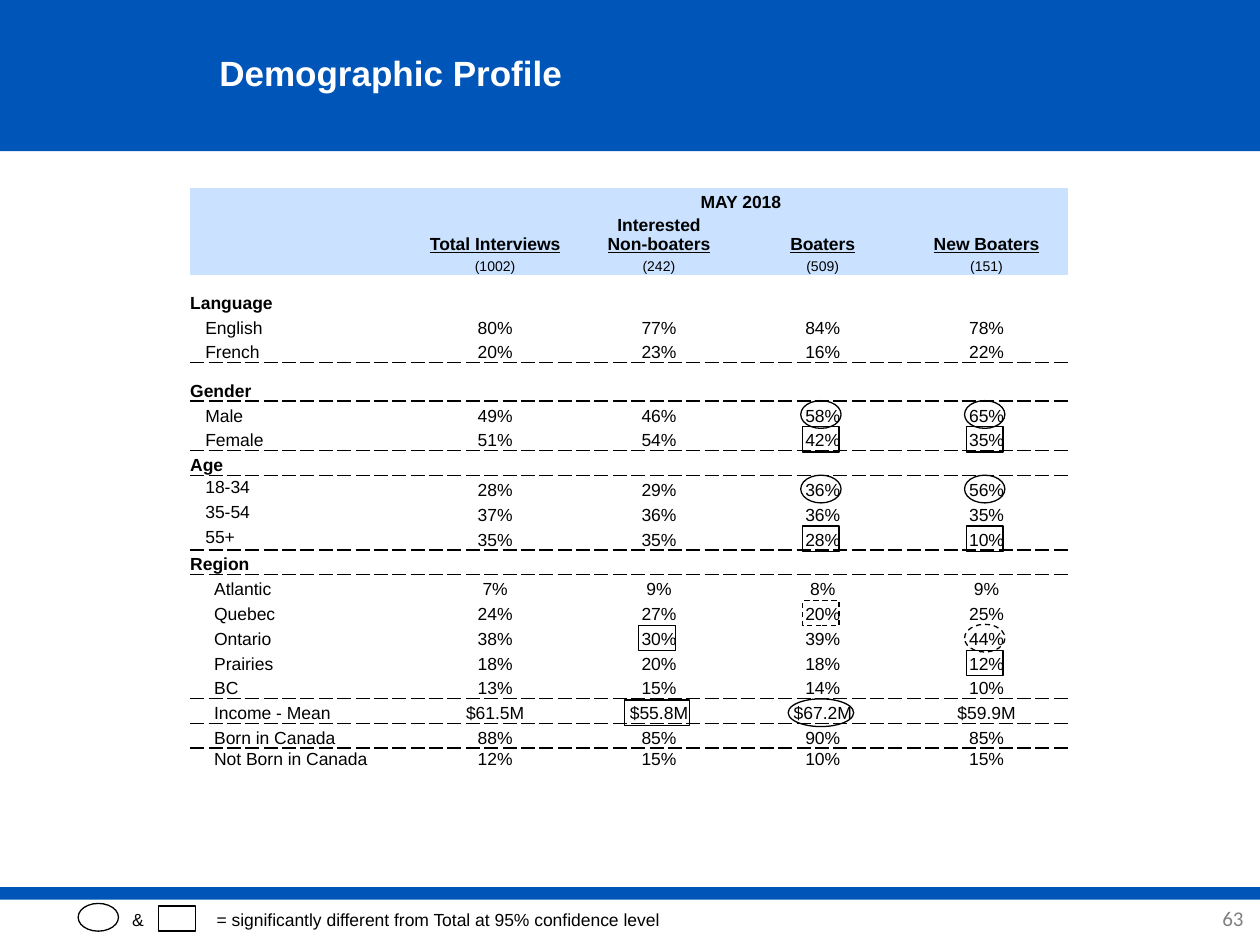
from lxml import etree
from pptx import Presentation
from pptx import util as u
from pptx.dml.color import RGBColor
from pptx.enum import dml, shapes, text
from pptx.oxml import ns

BLUE = RGBColor(0x00, 0x55, 0xB9)
PALE = RGBColor(0xCA, 0xE2, 0xFF)
WHITE = RGBColor(0xFF, 0xFF, 0xFF)
BLACK = RGBColor(0, 0, 0)
GREY = RGBColor(0x80, 0x80, 0x80)
RECT = shapes.MSO_SHAPE.RECTANGLE
OVAL = shapes.MSO_SHAPE.OVAL
LEFT, MID, RIGHT = text.PP_ALIGN.LEFT, text.PP_ALIGN.CENTER, text.PP_ALIGN.RIGHT
BASE, HALF = text.MSO_ANCHOR.BOTTOM, text.MSO_ANCHOR.MIDDLE
PLAIN = "{2D5ABB26-0587-4C30-8999-92F81FD0307C}"

ROWS = [
    ("", "MAY 2018", "", "", ""),
    ("", "Total Interviews", "Interested\nNon-boaters", "Boaters", "New Boaters"),
    ("", "(1002)", "(242)", "(509)", "(151)"),
    ("Language",),
    ("English", "80%", "77%", "84%", "78%"),
    ("French", "20%", "23%", "16%", "22%"),
    ("Gender",),
    ("Male", "49%", "46%", "58%", "65%"),
    ("Female", "51%", "54%", "42%", "35%"),
    ("Age",),
    ("18-34", "28%", "29%", "36%", "56%"),
    ("35-54", "37%", "36%", "36%", "35%"),
    ("55+", "35%", "35%", "28%", "10%"),
    ("Region",),
    ("Atlantic", "7%", "9%", "8%", "9%"),
    ("Quebec", "24%", "27%", "20%", "25%"),
    ("Ontario", "38%", "30%", "39%", "44%"),
    ("Prairies", "18%", "20%", "18%", "12%"),
    ("BC", "13%", "15%", "14%", "10%"),
    ("Income - Mean", "$61.5M", "$55.8M", "$67.2M", "$59.9M"),
    ("Born in Canada", "88%", "85%", "90%", "85%"),
    ("Not Born in Canada", "12%", "15%", "10%", "15%"),
]
HEAD = 3
TALL = {1: 23.5, 2: 11.5, 3: 21.9, 6: 21.9, 21: 11.7}
HIGH = [TALL.get(i, 14.2) / 7.2 for i in range(len(ROWS))]
WIDE = [17.7] + [13] * 4
RULED = {5, 8, 12, 18, 19}
AGES = range(10, 13)
DEEP = 14
TABLE = (15.1, 14.9)
SIZES = {RECT: (2.9, 2), OVAL: (3.2, 2.2)}
MARKS = [
    (OVAL, 7, 3), (OVAL, 7, 4), (RECT, 8, 3), (RECT, 8, 4),
    (OVAL, 10, 3), (OVAL, 10, 4), (RECT, 12, 3), (RECT, 12, 4),
    (RECT, 15, 3, True), (RECT, 16, 2), (OVAL, 16, 4, True), (RECT, 17, 4),
    (RECT, 19, 2, False, 5.2), (OVAL, 19, 3, False, 5.2),
]


class Page:
    """Draws styled elements on a slide laid out as 100 columns by 75 rows."""

    def __init__(self, deck):
        self.unit = deck.slide_width / 100
        self.slide = deck.slides.add_slide(deck.slide_layouts[5])
        self.font = {"name": "Arial", "size": u.Pt(10), "bold": False, "underline": False}

    def span(self, *nums):
        return [round(n * self.unit) for n in nums]

    def say(self, para, words, color=BLACK, **style):
        run = para.add_run()
        run.text = words
        for key, val in {**self.font, **style}.items():
            setattr(run.font, key, val)
        run.font.color.rgb = color

    def frame(self, frame, pads, **style):
        sides = ("margin_left", "margin_top", "margin_right", "margin_bottom")
        for key, val in {**dict(zip(sides, self.span(*pads))), **style}.items():
            setattr(frame, key, val)

    def title(self, words, at):
        item = self.slide.shapes.title
        item.left, item.top, item.width, item.height = self.span(*at)
        self.frame(item.text_frame, (1, 0.5, 1, 0.5), vertical_anchor=HALF, word_wrap=True)
        para = item.text_frame.paragraphs[0]
        para.alignment = LEFT
        self.say(para, words, WHITE, size=u.Pt(20), bold=True)
        item._element.getparent().append(item._element)

    def label(self, words, at, pads, align=LEFT, tab=None, **style):
        box = self.slide.shapes.add_textbox(*self.span(*at))
        self.frame(box.text_frame, pads, vertical_anchor=HALF, word_wrap=True)
        para = box.text_frame.paragraphs[0]
        para.alignment = align
        if tab:
            tabs = etree.SubElement(para._p.get_or_add_pPr(), ns.qn("a:tabLst"))
            etree.SubElement(tabs, ns.qn("a:tab"), pos=str(self.span(tab)[0]), algn="l")
        self.say(para, words, **style)

    def band(self, at):
        item = self.slide.shapes.add_shape(RECT, *self.span(*at))
        item.shadow.inherit = False
        item.fill.solid()
        item.fill.fore_color.rgb = BLUE
        item.line.fill.background()

    def ring(self, kind, x, y, dash=False, wide=None):
        w, h = SIZES[kind]
        w = wide or w
        item = self.slide.shapes.add_shape(kind, *self.span(x - w / 2, y - h / 2, w, h))
        item.shadow.inherit = False
        item.fill.background()
        item.line.color.rgb = BLACK
        item.line.width = u.Pt(0.75)
        if dash:
            item.line.dash_style = dml.MSO_LINE.DASH

    def mark(self, kind, row, col, dash=False, wide=None):
        x = TABLE[0] + sum(WIDE[:col]) + WIDE[col] / 2 - 0.15
        y = TABLE[1] + sum(HIGH[:row]) + HIGH[row] / 2 + 0.15
        self.ring(kind, x, y, dash, wide)

    def rule(self, cell, side):
        line = etree.SubElement(cell._tc.get_or_add_tcPr(), ns.qn(side), w="12700")
        fill = etree.SubElement(line, ns.qn("a:solidFill"))
        etree.SubElement(fill, ns.qn("a:srgbClr"), val=str(BLACK))
        etree.SubElement(line, ns.qn("a:prstDash"), val="dash")

    def cell(self, cell, words, row, col):
        for side, edge in (("a:lnT", row - 1), ("a:lnB", row)):
            if edge in RULED:
                self.rule(cell, side)
        cell.fill.solid()
        cell.fill.fore_color.rgb = PALE if row < HEAD else WHITE
        part = len(ROWS[row]) == 1
        pad = 0 if col or part else 1.9 if row >= DEEP else 1.2
        anchor = HALF if row in AGES and not col else BASE
        self.frame(cell, (pad, 0, 0, 0), vertical_anchor=anchor)
        para = cell.text_frame.paragraphs[0]
        para.alignment = MID if col else LEFT
        para._p.get_or_add_endParaRPr().set("sz", "800")
        lines = words.split("\n") if words else []
        for i, line in enumerate(lines):
            if i:
                para.add_line_break()
            self.say(para, line, bold=row < 2 or part,
                     size=u.Pt(8 if row == 2 else 10),
                     underline=row == 1 and i == len(lines) - 1)

    def table(self):
        size = (len(ROWS), len(WIDE))
        grid = self.slide.shapes.add_table(
            *size, *self.span(*TABLE, sum(WIDE), sum(HIGH))).table
        grid._tbl.tblPr.find(ns.qn("a:tableStyleId")).text = PLAIN
        grid.first_row = grid.horz_banding = False
        for col, wide in zip(grid.columns, self.span(*WIDE)):
            col.width = wide
        for row, high in zip(grid.rows, self.span(*HIGH)):
            row.height = high
        for r, data in enumerate(ROWS):
            for c in range(size[1]):
                self.cell(grid.cell(r, c), data[c] if c < len(data) else "", r, c)
        grid.cell(0, 1).merge(grid.cell(0, 4))


def main():
    deck = Presentation()
    deck.slide_width, deck.slide_height = u.Inches(10), u.Inches(7.5)
    page = Page(deck)
    page.band((0, -0.3, 100, 12.3))
    page.band((0, 70.4, 100, 1))
    page.title("Demographic Profile", (16.4, 0, 80.9, 11.5))
    page.label("63", (93.6, 70.9, 6.3, 4), (0.4, 0.4, 1.2, 0.4), RIGHT,
               name="Calibri", size=u.Pt(12), color=GREY)
    page.label("&\t= significantly different from Total at 95% confidence level",
               (9.5, 71.6, 57.5, 2.7), (1, 0.5, 1, 0.5), tab=6.7)
    page.ring(RECT, 14.05, 72.9)
    page.ring(OVAL, 7.8, 72.8)
    page.table()
    for item in MARKS:
        page.mark(*item)
    deck.save("out.pptx")


if __name__ == "__main__":
    main()
